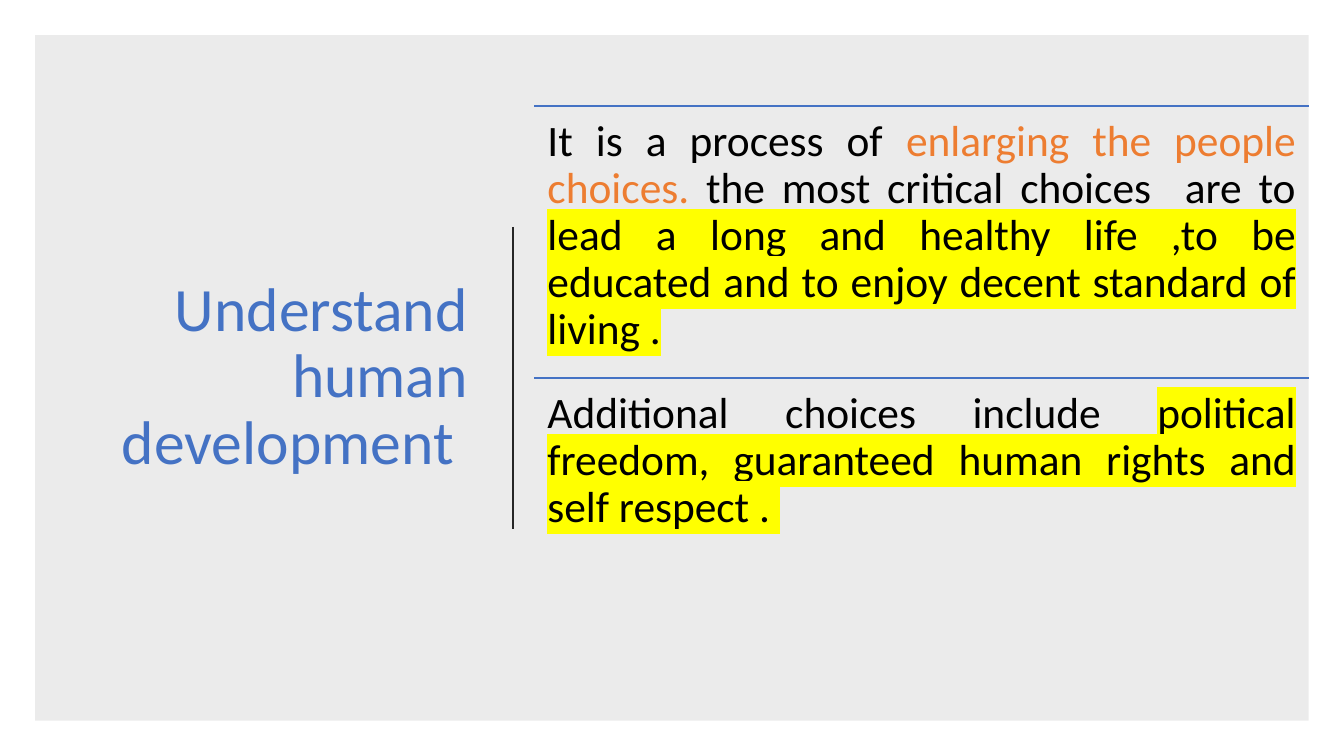
from dataclasses import dataclass

from lxml.etree import SubElement
from pptx import Presentation
from pptx.dml.color import RGBColor
from pptx.enum.shapes import MSO_CONNECTOR as Line, MSO_SHAPE as Shape
from pptx.enum.text import MSO_ANCHOR as Anchor, PP_ALIGN as Align
from pptx.oxml.ns import qn
from pptx.util import Inches, Pt


@dataclass(frozen=True)
class Theme:
    font: str = "Calibri"
    title_size: int = 44
    body_size: int = 31
    ink: str = "000000"
    blue: str = "4472C4"
    orange: str = "ED7D31"
    marker: str = "FFFF00"
    divider: str = "262626"
    panel_alpha: int = 8


THEME = Theme()

TITLE = "Understand human development "
# Each statement is a list of (text, colour, highlight)
STATEMENTS = [
    [
        ("It is a process of ", THEME.ink, None),
        ("enlarging the people choices.", THEME.orange, None),
        (" the most critical choices  are to ", THEME.ink, None),
        ("lead a long and healthy life ,to be educated and to enjoy "
         "decent standard of living .", THEME.ink, THEME.marker),
    ],
    [
        ("Additional choices include ", THEME.ink, None),
        ("political freedom, guaranteed human rights and self respect . ",
         THEME.ink, THEME.marker),
    ],
]


def add_line(page, start, end, color, weight):
    line = page.shapes.add_connector(Line.STRAIGHT, *map(Inches, start + end))
    line.line.color.rgb = RGBColor.from_string(color)
    line.line.width = Pt(weight)
    SubElement(line._element.spPr, qn("a:effectLst"))


def add_text(page, box, spans, size, align, anchor, margins):
    frame = page.shapes.add_textbox(*map(Inches, box)).text_frame
    side, end = map(Inches, margins)
    frame_format = {
        "word_wrap": True, "vertical_anchor": anchor,
        "margin_left": side, "margin_right": side,
        "margin_top": end, "margin_bottom": end,
    }
    for name, value in frame_format.items():
        setattr(frame, name, value)
    para = frame.paragraphs[0]
    para.alignment = align
    para.line_spacing = 0.9
    for text, color, highlight in spans:
        span = para.add_run()
        span.text = text
        for name, value in {"name": THEME.font, "size": Pt(size)}.items():
            setattr(span.font, name, value)
        span.font.color.rgb = RGBColor.from_string(color)
        if highlight:
            props = span.font._element
            mark = SubElement(props, qn("a:highlight"))
            SubElement(mark, qn("a:srgbClr"), val=highlight)
            # The highlight has to follow the fill directly
            props.find(qn("a:solidFill")).addnext(mark)


def add_panel(page, box):
    panel = page.shapes.add_shape(Shape.RECTANGLE, *map(Inches, box))
    panel.shadow.inherit = False
    panel.line.fill.background()
    panel.fill.solid()
    panel.fill.fore_color.rgb = RGBColor.from_string(THEME.ink)
    tint = panel._element.spPr.find(qn("a:solidFill"))[0]
    SubElement(tint, qn("a:alpha"), val=str(THEME.panel_alpha * 1000))


def add_title(page, box):
    add_text(page, box, [(TITLE, THEME.blue, None)], THEME.title_size,
             Align.RIGHT, Anchor.MIDDLE, (0.1, 0.05))
    # Vertical divider, centred on the title
    left, top, width, height = box
    x, middle, half = left + width + 0.35, top + height / 2, 1.5
    add_line(page, (x, middle - half), (x, middle + half), THEME.divider, 1.5)


def add_statements(page, box):
    left, top, width, height = box
    row_height = height / len(STATEMENTS)
    for index, spans in enumerate(STATEMENTS):
        y = top + index * row_height
        add_line(page, (left, y), (left + width, y), THEME.blue, 1)
        add_text(page, (left, y, width, row_height), spans, THEME.body_size,
                 Align.JUSTIFY, Anchor.TOP, (0.13, 0.13))


def main():
    deck = Presentation()
    deck.slide_width, deck.slide_height = Inches(13.33), Inches(7.5)
    page = deck.slides.add_slide(deck.slide_layouts[6])
    add_panel(page, (0.35, 0.35, 12.63, 6.8))
    add_title(page, (0.92, 1.05, 3.82, 5.4))
    add_statements(page, (5.3, 1.05, 7.68, 5.4))
    deck.save("out.pptx")


if __name__ == "__main__":
    main()
